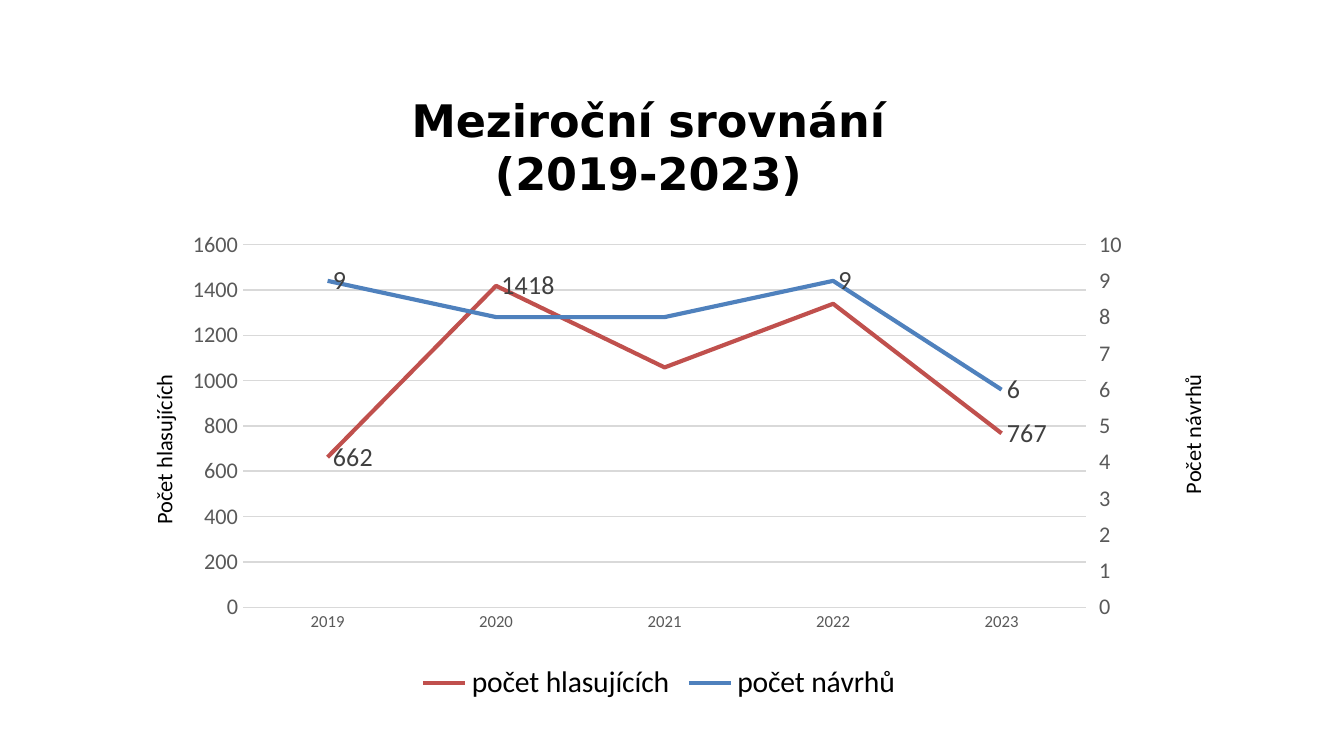
from copy import deepcopy

from lxml import etree
from pptx import Presentation
from pptx.chart.axis import CategoryAxis, ValueAxis
from pptx.chart.data import CategoryChartData
from pptx.dml.color import RGBColor
from pptx.enum.chart import (XL_CHART_TYPE, XL_LABEL_POSITION, XL_LEGEND_POSITION,
                             XL_MARKER_STYLE, XL_TICK_MARK)
from pptx.oxml.ns import qn
from pptx.util import Pt

LINE = XL_CHART_TYPE.LINE
LABEL_RIGHT = XL_LABEL_POSITION.RIGHT
LEGEND_BOTTOM = XL_LEGEND_POSITION.BOTTOM
NO_MARKER = XL_MARKER_STYLE.NONE
TICK_NONE = XL_TICK_MARK.NONE
TICK_OUTSIDE = XL_TICK_MARK.OUTSIDE

FONT = "Calibri"
BLACK, AXIS_GRAY, LABEL_GRAY, GRID_GRAY = "000000", "595959", "404040", "D9D9D9"
YEARS = ["2019", "2020", "2021", "2022", "2023"]
SERIES = [
    ("počet hlasujících", [662, 1418, 1058, 1339, 767], "C0504D", (2, 3)),
    ("počet návrhů", [9, 8, 8, 9, 6], "4F81BD", (1, 2)),
]


def color(value):
    return RGBColor.from_string(value)


def style_font(font, size, value, name=FONT, bold=False):
    font.size = Pt(size)
    font.name = name
    font.bold = bold
    font.color.rgb = color(value)


def style_line(line, value, width):
    line.color.rgb = color(value)
    line.width = Pt(width)


def set_layout(parent, index, inner=False, **fractions):
    for old in parent.findall(qn("c:layout")):
        parent.remove(old)
    layout = etree.Element(qn("c:layout"))
    manual = etree.SubElement(layout, qn("c:manualLayout"))
    if inner:
        etree.SubElement(manual, qn("c:layoutTarget"), val="inner")
    for side in ("x", "y"):
        etree.SubElement(manual, qn(f"c:{side}Mode"), val="edge")
    for side, fraction in fractions.items():
        etree.SubElement(manual, qn(f"c:{side}"), val=str(fraction))
    parent.insert(index, layout)


def write_title(title, lines, size, x, y, name=FONT, bold=False):
    text_frame = title.text_frame
    text_frame.text = "\n".join(lines)
    for paragraph in text_frame.paragraphs:
        for run in paragraph.runs:
            style_font(run.font, size, BLACK, name, bold)
    set_layout(title._element, 1, x=x, y=y)


def style_value_axis(axis, title, maximum, unit, tick, x):
    axis.minimum_scale = 0
    axis.maximum_scale = maximum
    axis.major_unit = unit
    axis.major_tick_mark = tick
    axis.minor_tick_mark = TICK_NONE
    axis.format.line.fill.background()
    style_font(axis.tick_labels.font, 12, AXIS_GRAY)
    write_title(axis.axis_title, [title], 12, x, 0.46)
    body = axis.axis_title._element.find(".//" + qn("a:bodyPr"))
    body.set("rot", "-5400000")
    body.set("vert", "horz")


def add_secondary_axes(chart):
    category, value = chart.category_axis._element, chart.value_axis._element
    plot = chart.plots[0]._element
    right_plot = deepcopy(plot)
    plot.remove(plot.findall(qn("c:ser"))[1])
    right_plot.remove(right_plot.findall(qn("c:ser"))[0])
    plot.addnext(right_plot)
    right_category, right_value = deepcopy(category), deepcopy(value)
    value.addnext(right_value)
    right_value.addnext(right_category)
    for element, own, other in ((right_category, "501", "502"), (right_value, "502", "501")):
        element.find(qn("c:axId")).set("val", own)
        element.find(qn("c:crossAx")).set("val", other)
    for reference, own in zip(right_plot.findall(qn("c:axId")), ("501", "502")):
        reference.set("val", own)
    right_value.find(qn("c:axPos")).set("val", "r")
    right_value.find(qn("c:crosses")).set("val", "max")
    CategoryAxis(right_category).visible = False
    right_axis = ValueAxis(right_value)
    right_axis.has_major_gridlines = False
    return right_axis


def style_series(series, value, hidden_labels):
    series.smooth = False
    series.marker.style = NO_MARKER
    style_line(series.format.line, value, 2.25)
    labels = series.data_labels
    labels.show_value = True
    labels.position = LABEL_RIGHT
    style_font(labels.font, 14, LABEL_GRAY)
    for position, index in enumerate(hidden_labels):
        label = etree.Element(qn("c:dLbl"))
        etree.SubElement(label, qn("c:idx"), val=str(index))
        etree.SubElement(label, qn("c:delete"), val="1")
        labels._element.insert(position, label)


def add_comparison_chart(slide, left, top, width, height):
    data = CategoryChartData()
    data.categories = YEARS
    for name, values, _, _ in SERIES:
        data.add_series(name, values)
    chart = slide.shapes.add_chart(
        LINE, Pt(left), Pt(top), Pt(width), Pt(height), data).chart
    style_font(chart.font, 10, BLACK)
    write_title(chart.chart_title, ["Meziroční srovnání", "(2019-2023)"], 24,
                0.27, 0.01, "DejaVu Sans", True)
    chart.has_legend = True
    chart.legend.position = LEGEND_BOTTOM
    chart.legend.include_in_layout = False
    style_font(chart.legend.font, 16, BLACK)

    years = chart.category_axis
    years.major_tick_mark = TICK_NONE
    style_font(years.tick_labels.font, 9, AXIS_GRAY)
    style_line(years.format.line, GRID_GRAY, 0.75)

    left_axis = chart.value_axis
    right_axis = add_secondary_axes(chart)
    left_axis.has_major_gridlines = True
    style_line(left_axis.major_gridlines.format.line, GRID_GRAY, 0.75)
    style_value_axis(left_axis, "Počet hlasujících", 1600, 200, TICK_NONE, 0.03)
    style_value_axis(right_axis, "Počet návrhů", 10, 1, TICK_OUTSIDE, 0.97)

    for plot, (_, _, value, hidden_labels) in zip(chart.plots, SERIES):
        plot.vary_by_categories = False
        style_series(plot.series[0], value, hidden_labels)
    plot_area = chart.plots[0]._element.getparent()
    set_layout(plot_area, 0, inner=True, x=0.12, y=0.26, w=0.77, h=0.58)


def main():
    presentation = Presentation()
    presentation.slide_width = Pt(720)
    presentation.slide_height = Pt(405)
    slide = presentation.slides.add_slide(presentation.slide_layouts[6])
    add_comparison_chart(slide, 60, 44, 590, 335)
    presentation.save("out.pptx")


if __name__ == "__main__":
    main()
